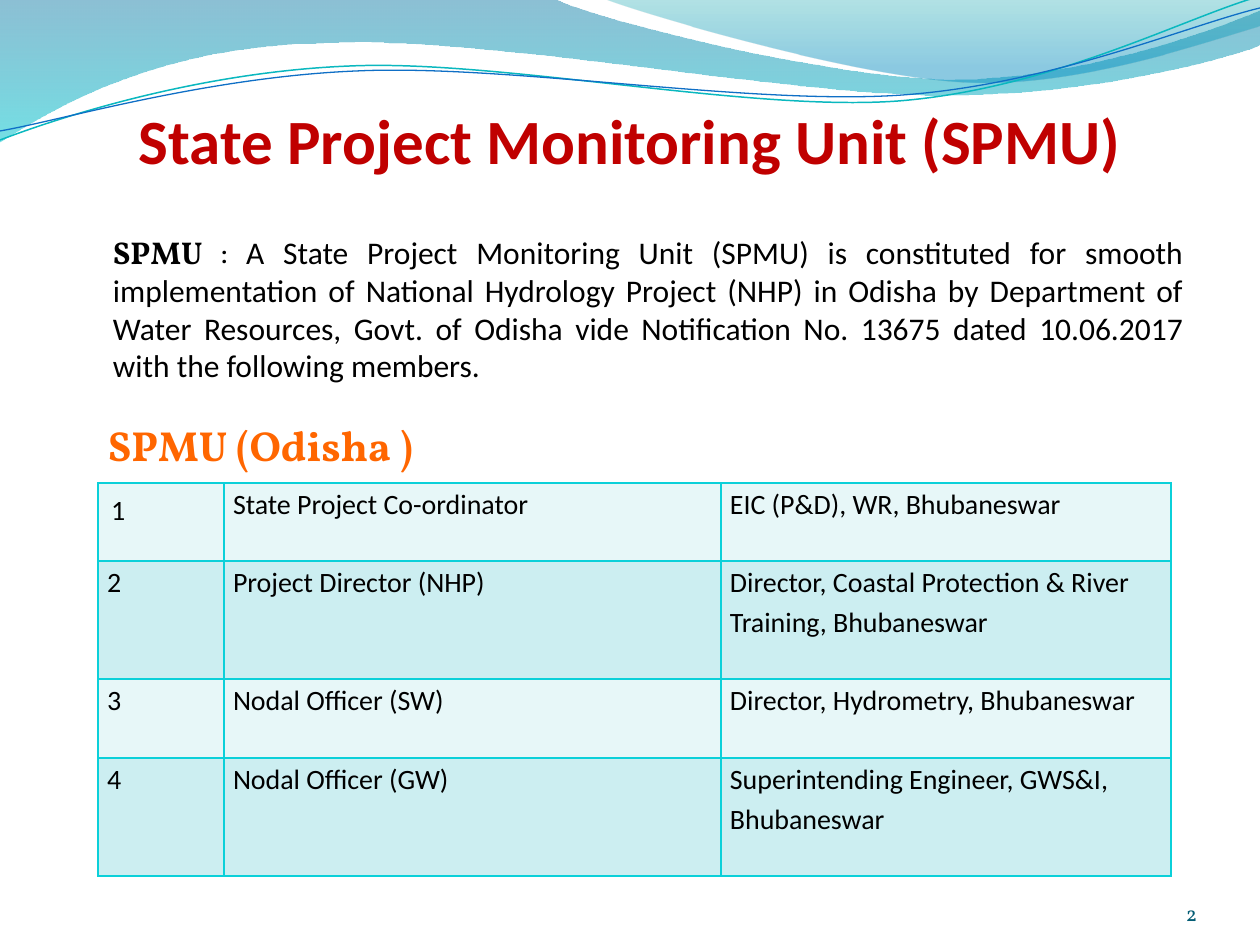
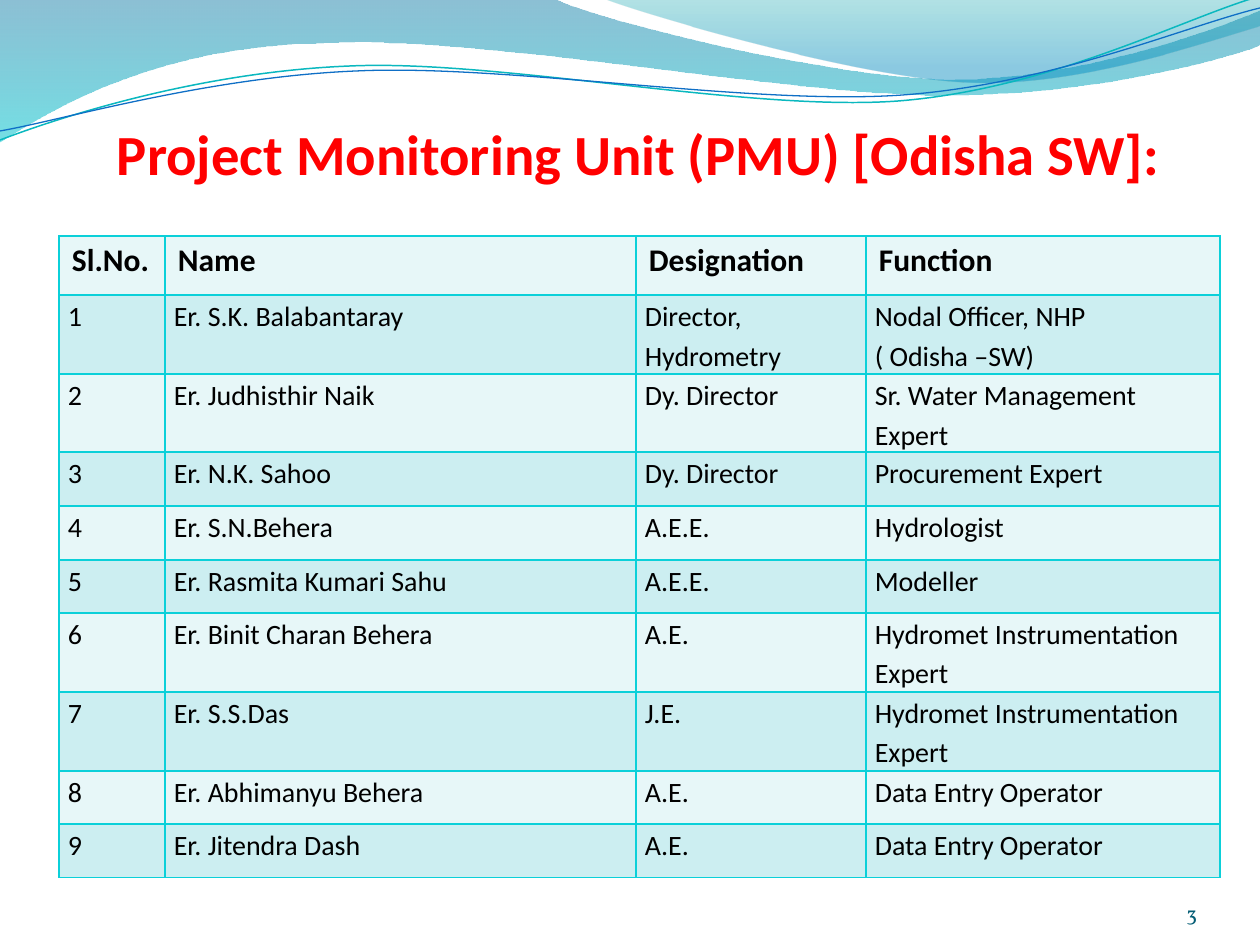
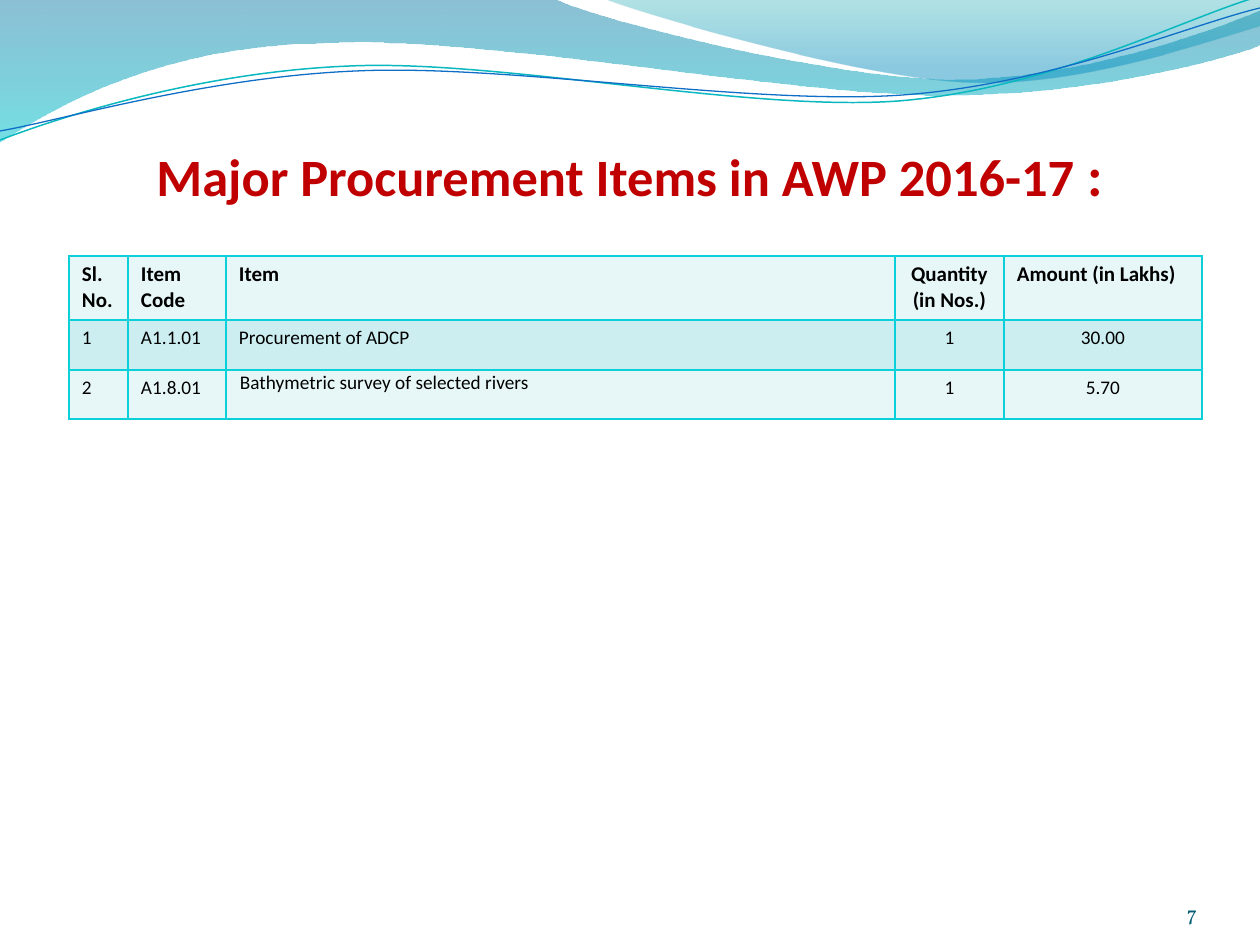
"""Builds three slides on the hydrology project's monitoring units and procurement."""
import dataclasses

import pptx
import pptx.dml.color
import pptx.enum.text
import pptx.oxml
import pptx.oxml.ns
import pptx.util
from lxml import etree

EMU_PER_PX = 914400 / 126
ALIGN = pptx.enum.text.PP_ALIGN
ANCHOR = pptx.enum.text.MSO_ANCHOR
NORMAL_INSETS = (13, 6, 13, 6)
TIGHT_INSETS = (9, 0, 9, 0)


@dataclasses.dataclass(frozen=True)
class Theme:
    """Colours, fonts and type sizes of the deck."""

    sans: str = "Calibri"
    serif: str = "Vollkorn"
    black: str = "000000"
    dark_red: str = "C00000"
    red: str = "FF0000"
    orange: str = "FF6600"
    number: str = "045D75"
    border: str = "0BD0D9"
    bands: tuple = ("E7F7F8", "CCEEF1")
    teal_line: str = "0AB8BF"
    blue_line: str = "0F6FC6"
    wide_wave: tuple = ((0, "0074A1", 45), (1, "00C6CF", 55))
    right_wave: tuple = ((0, "00A1A9", 30), (0.8, "008BBF", 45))
    title_large: float = 36
    title_medium: float = 32.4
    title_small: float = 30
    title_colon: float = 32
    subtitle: float = 24
    body: float = 18
    cell: float = 16
    small_header: float = 12
    small_cell: float = 11
    page_number: float = 12


THEME = Theme()

WIDE_WAVE = [
    (0, 0), (554, -1),
    ((600, 21), (837, 79), (955, 79)), ((1075, 79), (1207, 33), (1260, 11)),
    (1261, 45),
    ((1239, 55), (1096, 96), (940, 95)), ((784, 95), (481, 35), (324, 43)),
    ((163, 45), (58, 105), (-1, 142)),
]
RIGHT_WAVE = [
    (604, -1),
    ((641, 14), (859, 78), (969, 82)), ((1079, 87), (1211, 40), (1260, 26)),
    (1260, 0),
]
TEAL_CURVE = [
    (0, 140),
    ((60, 117), (199, 72), (349, 66)), ((498, 59), (747, 112), (898, 101)),
    ((1050, 89), (1182, 19), (1257, -3)),
]
BLUE_CURVE = [
    (0, 131),
    ((59, 121), (207, 77), (357, 71)), ((508, 64), (752, 106), (903, 95)),
    ((1053, 84), (1186, 26), (1260, 8)),
]

SPMU_MEMBERS = [
    ("1", "State Project Co-ordinator", "EIC (P&D), WR, Bhubaneswar"),
    ("2", "Project Director (NHP)",
     "Director, Coastal Protection & River Training, Bhubaneswar"),
    ("3", "Nodal Officer (SW)", "Director, Hydrometry, Bhubaneswar"),
    ("4", "Nodal Officer (GW)", "Superintending Engineer, GWS&I, Bhubaneswar"),
]
PMU_MEMBERS = [
    ("Sl.No.", "Name", "Designation", "Function"),
    ("1", "Er. S.K. Balabantaray", "Director, Hydrometry",
     "Nodal Officer, NHP\v( Odisha –SW)"),
    ("2", "Er. Judhisthir Naik", "Dy. Director", "Sr. Water Management Expert"),
    ("3", "Er. N.K. Sahoo", "Dy. Director", "Procurement Expert"),
    ("4", "Er. S.N.Behera", "A.E.E.", "Hydrologist"),
    ("5", "Er. Rasmita Kumari Sahu", "A.E.E.", "Modeller"),
    ("6", "Er. Binit Charan Behera", "A.E.", "Hydromet Instrumentation Expert"),
    ("7", "Er. S.S.Das", "J.E.", "Hydromet Instrumentation Expert"),
    ("8", "Er. Abhimanyu Behera", "A.E.", "Data Entry Operator"),
    ("9", "Er. Jitendra Dash", "A.E.", "Data Entry Operator"),
]
PROCUREMENT_ITEMS = [
    ("Sl.No.", "Item Code", "Item", "Quantity\n(in Nos.)", "Amount (in Lakhs)"),
    ("1", "A1.1.01", "Procurement of ADCP", "1", "30.00"),
    ("2", "A1.8.01", "Bathymetric survey of selected rivers", "1", "5.70"),
]


def px(length):
    """Turn pixels into EMU."""
    return pptx.util.Emu(round(length * EMU_PER_PX))


def rgb(colour):
    """Turn a hex string into a colour."""
    return pptx.dml.color.RGBColor.from_string(colour)


def format_run(run, size, colour=THEME.black, font=THEME.sans, bold=False):
    """Set the font of a run."""
    run.font.size = pptx.util.Pt(size)
    run.font.name = font
    run.font.bold = bold
    run.font.color.rgb = rgb(colour)


def set_insets(target, insets):
    """Set the left, top, right and bottom margins of a text frame or cell."""
    (target.margin_left, target.margin_top,
     target.margin_right, target.margin_bottom) = map(px, insets)


def add_text(slide, box, runs, align=ALIGN.LEFT, anchor=ANCHOR.TOP, insets=NORMAL_INSETS):
    """Add a one-paragraph text box of (text, format) runs."""
    text_frame = slide.shapes.add_textbox(*map(px, box)).text_frame
    text_frame.word_wrap = True
    text_frame.vertical_anchor = anchor
    set_insets(text_frame, insets)
    paragraph = text_frame.paragraphs[0]
    paragraph.alignment = align
    for text, style in runs:
        run = paragraph.add_run()
        run.text = text
        format_run(run, **style)
    return paragraph


def add_title(slide, box, runs, colour, align=ALIGN.CENTER, indent=0):
    """Add a bold title from (text, size) runs standing on the foot of its box."""
    styled = [(text, {"size": size, "colour": colour, "bold": True}) for text, size in runs]
    add_text(slide, box, styled, align, ANCHOR.BOTTOM, (indent, 6, 0, 0))


def bend_line(line, controls, shape):
    """Turn a straight path segment into a cubic curve with two control points."""
    line.tag = pptx.oxml.ns.qn("a:cubicBezTo")
    for index, (x, y) in enumerate(controls):
        point = etree.Element(pptx.oxml.ns.qn("a:pt"),
                              x=str(px(x) - shape.left), y=str(px(y) - shape.top))
        line.insert(index, point)


def add_outline(slide, segments, close):
    """Add a freeform of straight and curved segments."""
    ends = [segment[-1] if len(segment) == 3 else segment for segment in segments]
    corners = [(px(x), px(y)) for x, y in ends]
    builder = slide.shapes.build_freeform(*corners[0])
    builder.add_line_segments(corners[1:], close=close)
    shape = builder.convert_to_shape()
    shape.shadow.inherit = False
    lines = list(shape.element.iter(pptx.oxml.ns.qn("a:lnTo")))
    for line, segment in zip(lines, segments[1:]):
        if len(segment) == 3:
            bend_line(line, segment[:2], shape)
    return shape


def add_wave(slide, segments, stops):
    """Add a translucent wave with a vertical gradient."""
    shape = add_outline(slide, segments, True)
    shape.line.fill.background()
    shape.fill.gradient()
    shape.fill.gradient_angle = 270
    for gradient_stop, (position, colour, _) in zip(shape.fill.gradient_stops, stops):
        gradient_stop.position = position
        gradient_stop.color.rgb = rgb(colour)
    colour_elements = shape.element.iter(pptx.oxml.ns.qn("a:srgbClr"))
    for element, (_, _, opacity) in zip(list(colour_elements), stops):
        etree.SubElement(element, pptx.oxml.ns.qn("a:alpha"), val=str(opacity * 1000))


def add_curve(slide, segments, colour, width):
    """Add a thin open curve."""
    shape = add_outline(slide, segments, False)
    shape.fill.background()
    shape.line.color.rgb = rgb(colour)
    shape.line.width = pptx.util.Pt(width)


def add_page(presentation, number):
    """Add a slide with the wave band and its page number."""
    slide = presentation.slides.add_slide(presentation.slide_layouts[6])
    add_wave(slide, WIDE_WAVE, THEME.wide_wave)
    add_wave(slide, RIGHT_WAVE, THEME.right_wave)
    add_curve(slide, TEAL_CURVE, THEME.teal_line, 0.85)
    add_curve(slide, BLUE_CURVE, THEME.blue_line, 0.75)
    style = {"size": THEME.page_number, "colour": THEME.number, "font": THEME.serif}
    add_text(slide, (1092, 876, 105, 50), [(str(number), style)],
             ALIGN.RIGHT, ANCHOR.BOTTOM, (0, 0, 0, 0))
    return slide


def add_borders(cell):
    """Draw a line on each side of a cell."""
    properties = cell._tc.get_or_add_tcPr()
    for side in ("lnL", "lnR", "lnT", "lnB"):
        properties.append(pptx.oxml.parse_xml(
            f'<a:{side} {pptx.oxml.ns.nsdecls("a")} w="12700"><a:solidFill>'
            f'<a:srgbClr val="{THEME.border}"/></a:solidFill></a:{side}>'))


def add_cell(cell, text, fill, size, bold, align, spacing, insets):
    """Fill and write one table cell."""
    add_borders(cell)
    cell.fill.solid()
    cell.fill.fore_color.rgb = rgb(fill)
    set_insets(cell, insets)
    cell.text_frame.text = text
    for paragraph in cell.text_frame.paragraphs:
        paragraph.alignment = align
        paragraph.line_spacing = spacing
        for run in paragraph.runs:
            format_run(run, size, bold=bold)


def add_banded_table(slide, corner, widths, heights, rows, size, header_size=None,
                     spacing=1.0, insets=NORMAL_INSETS, centred=()):
    """Add a table with alternating bands and, given its size, a bold header row."""
    table = slide.shapes.add_table(
        len(rows), len(widths), *map(px, (*corner, sum(widths), sum(heights)))).table
    table.first_row = table.horz_banding = False
    for column, width in zip(table.columns, widths):
        column.width = px(width)
    for row_index, (texts, height) in enumerate(zip(rows, heights)):
        table.rows[row_index].height = px(height)
        header = row_index == 0 and header_size is not None
        for column_index, text in enumerate(texts):
            is_centred = (row_index, column_index) in centred
            add_cell(table.cell(row_index, column_index), text, THEME.bands[row_index % 2],
                     header_size if header else size, header,
                     ALIGN.CENTER if is_centred else ALIGN.LEFT,
                     1.0 if header else spacing, NORMAL_INSETS if header else insets)
    return table


def add_spmu_slide(presentation):
    """Add the state unit with its members."""
    slide = add_page(presentation, 2)
    serif = {"size": THEME.body, "font": THEME.serif}
    paragraph = add_text(slide, (63, 227, 1134, 207), [
        ("SPMU ", {**serif, "bold": True}),
        (": ", serif),
        ("A State Project Monitoring Unit (SPMU) is constituted for smooth implementation of "
         "National Hydrology Project (NHP) in Odisha by Department of Water Resources, Govt. of "
         "Odisha vide Notification No. 13675 dated 10.06.2017 with the following members.",
         {"size": THEME.body}),
    ], ALIGN.JUSTIFY, insets=(50, 6, 13, 6))
    paragraph.space_before = pptx.util.Pt(3.6)
    add_title(slide, (63, 97, 1134, 80),
              [("State Project Monitoring Unit (SPMU)", THEME.title_large)], THEME.dark_red)
    table = add_banded_table(slide, (98, 483), (126, 497, 450), (78, 118, 79, 118),
                             SPMU_MEMBERS, THEME.cell, spacing=1.15, insets=TIGHT_INSETS)
    set_insets(table.cell(0, 0), NORMAL_INSETS)
    add_text(slide, (78, 414, 610, 63), [
        ("SPMU (Odisha )", {"size": THEME.subtitle, "colour": THEME.orange,
                            "font": THEME.serif, "bold": True})], insets=(30, 6, 13, 6))


def add_pmu_slide(presentation):
    """Add the surface water unit with its staff."""
    slide = add_page(presentation, 3)
    add_title(slide, (78, 79, 1134, 108),
              [("Project Monitoring Unit (PMU) [Odisha SW]:", THEME.title_medium)],
              THEME.red, ALIGN.LEFT, 39)
    heights = (59, 79, 78, 54, 54, 53, 79, 79, 53, 54)
    add_banded_table(slide, (59, 236), (106, 471, 230, 354), heights, PMU_MEMBERS,
                     THEME.cell, THEME.body, 1.15, TIGHT_INSETS)


def add_procurement_slide(presentation):
    """Add the list of procurement items."""
    slide = add_page(presentation, 7)
    centred = {(0, 3), (1, 3), (1, 4), (2, 3), (2, 4)}
    table = add_banded_table(slide, (69, 256), (59, 98, 669, 109, 198), (64, 50, 49),
                             PROCUREMENT_ITEMS, THEME.small_cell, THEME.small_header,
                             centred=centred)
    set_insets(table.cell(2, 2), (14, 1, 1, 0))
    add_title(slide, (69, 137, 1134, 71),
              [("Major Procurement Items in AWP 2016-17 ", THEME.title_small),
               (": ", THEME.title_colon)], THEME.dark_red)


def main():
    """Build and save the presentation."""
    presentation = pptx.Presentation()
    presentation.slide_width = px(1260)
    presentation.slide_height = px(945)
    add_spmu_slide(presentation)
    add_pmu_slide(presentation)
    add_procurement_slide(presentation)
    presentation.save("out.pptx")


if __name__ == "__main__":
    main()
